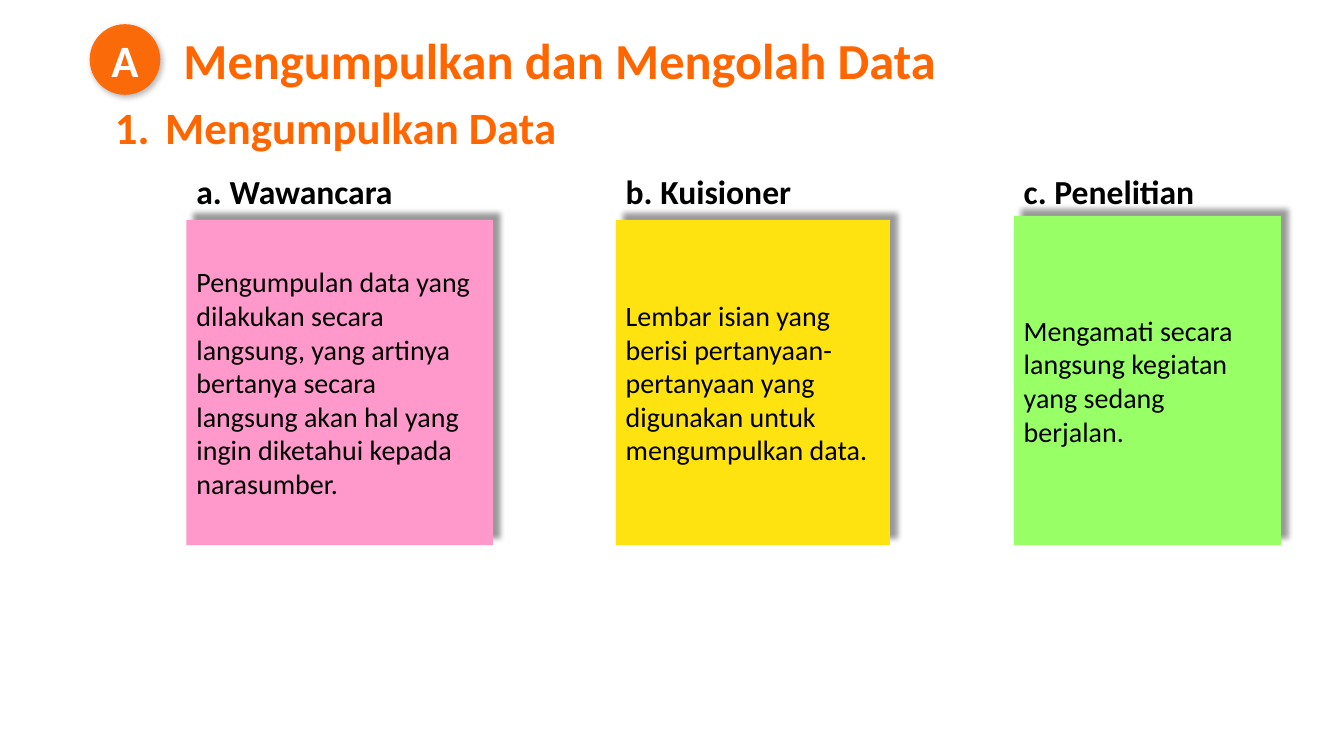
from lxml import etree
from pptx import Presentation
from pptx.dml.color import RGBColor
from pptx.enum.shapes import MSO_SHAPE
from pptx.enum.text import MSO_ANCHOR, MSO_AUTO_SIZE, PP_ALIGN
from pptx.oxml.ns import qn
from pptx.util import Cm, Pt

OVAL, RECTANGLE = MSO_SHAPE.OVAL, MSO_SHAPE.RECTANGLE
TOP, MIDDLE = MSO_ANCHOR.TOP, MSO_ANCHOR.MIDDLE
LEFT, CENTER = PP_ALIGN.LEFT, PP_ALIGN.CENTER
NO_AUTOFIT = MSO_AUTO_SIZE.NONE
TITLE_AND_CONTENT = 1

COLORS = {
    "accent": "FF6600",
    "ink": "000000",
    "paper": "FFFFFF",
    "pink": "FF99CC",
    "yellow": "FFE311",
    "green": "99FF66",
}
# Shadow settings: opacity %, blur pt, distance pt, direction in degrees
BADGE_SHADOW = (30, 4.5, 2.6, 53)
CARD_SHADOW = (40, 4, 7, 315)

LABEL_TOP = 4.17
CARD_BOTTOM = 13.74
# Label, label width, left, top, card width, colour, explanation
METHODS = [
    ("a. Wawancara", 5.51, 4.7, 5.54, 7.72, "pink",
     "Pengumpulan data yang dilakukan secara langsung, yang artinya bertanya "
     "secara langsung akan hal yang ingin diketahui kepada narasumber."),
    ("b. Kuisioner", 4.72, 15.52, 5.54, 6.91, "yellow",
     "Lembar isian yang berisi pertanyaan-pertanyaan yang digunakan untuk "
     "mengumpulkan data."),
    ("c. Penelitian", 4.85, 25.55, 5.44, 6.73, "green",
     "Mengamati secara langsung kegiatan yang sedang berjalan."),
]


class SlideBuilder:
    font_name = "Calibri"

    def __init__(self, slide):
        self.slide = slide

    def set_text(self, holder, text, size, color, bold=True, align=LEFT,
                 anchor=TOP, wrap=False, tab=None):
        """Fill a shape with one paragraph; tab is a left tab stop in cm."""
        frame = holder.text_frame
        frame.auto_size = NO_AUTOFIT
        frame.word_wrap = wrap
        frame.vertical_anchor = anchor
        frame.text = text
        paragraph = frame.paragraphs[0]
        paragraph.alignment = align
        paragraph.space_before = Pt(0)
        if tab is not None:
            properties = paragraph._p.get_or_add_pPr()
            properties.set("marL", "0")
            properties.set("indent", "0")
            etree.SubElement(properties, qn("a:buNone"))
            stops = etree.SubElement(properties, qn("a:tabLst"))
            etree.SubElement(stops, qn("a:tab"), pos=str(Cm(tab)), algn="l")
        font = paragraph.font
        font.name = self.font_name
        font.size = Pt(size)
        font.bold = bold
        font.color.rgb = RGBColor.from_string(COLORS[color])

    def heading(self, placeholder, text, box, size, tab=None):
        """Move a placeholder to box (left, top, width, height in cm)."""
        left, top, width, height = map(Cm, box)
        placeholder.left, placeholder.top = left, top
        placeholder.width, placeholder.height = width, height
        self.set_text(placeholder, text, size, "accent", tab=tab)

    def label(self, text, box):
        holder = self.slide.shapes.add_textbox(*map(Cm, box))
        self.set_text(holder, text, 24, "ink")

    def panel(self, kind, box, color, shadow, opacity=100):
        panel = self.slide.shapes.add_shape(kind, *map(Cm, box))
        panel.fill.solid()
        panel.fill.fore_color.rgb = RGBColor.from_string(COLORS[color])
        panel.line.fill.background()
        panel.shadow.inherit = False
        properties = panel._element.spPr
        if opacity < 100:
            fill = properties.find(qn("a:solidFill"))
            etree.SubElement(fill[0], qn("a:alpha"), val=str(opacity * 1000))
        strength, blur, distance, direction = shadow
        outer = etree.SubElement(
            properties.find(qn("a:effectLst")), qn("a:outerShdw"),
            blurRad=str(Pt(blur)), dist=str(Pt(distance)),
            dir=str(direction * 60000), algn="ctr", rotWithShape="0")
        tint = etree.SubElement(outer, qn("a:srgbClr"), val=COLORS["ink"])
        etree.SubElement(tint, qn("a:alpha"), val=str(strength * 1000))
        return panel

    def badge(self, letter, box):
        badge = self.panel(OVAL, box, "accent", BADGE_SHADOW, opacity=95)
        self.set_text(badge, letter, 32, "paper", align=CENTER, anchor=MIDDLE)

    def card(self, text, box, color):
        card = self.panel(RECTANGLE, box, color, CARD_SHADOW)
        self.set_text(card, text, 20, "ink", bold=False, anchor=MIDDLE,
                      wrap=True)


def main():
    deck = Presentation()
    deck.slide_width, deck.slide_height = Cm(33.87), Cm(19.05)
    slide = deck.slides.add_slide(deck.slide_layouts[TITLE_AND_CONTENT])
    builder = SlideBuilder(slide)

    builder.heading(slide.shapes.title, "Mengumpulkan dan Mengolah Data",
                    (4.37, 0.61, 19.69, 1.8), 36)
    builder.badge("A", (2.26, 0.61, 1.78, 1.78))
    builder.heading(slide.placeholders[1], "1.\tMengumpulkan Data",
                    (2.64, 2.39, 12.22, 1.63), 32, tab=1.75)

    for name, name_width, left, top, width, color, explanation in METHODS:
        builder.label(name, (left, LABEL_TOP, name_width, 1.27))
        builder.card(explanation, (left, top, width, CARD_BOTTOM - top), color)

    deck.save("out.pptx")


if __name__ == "__main__":
    main()
